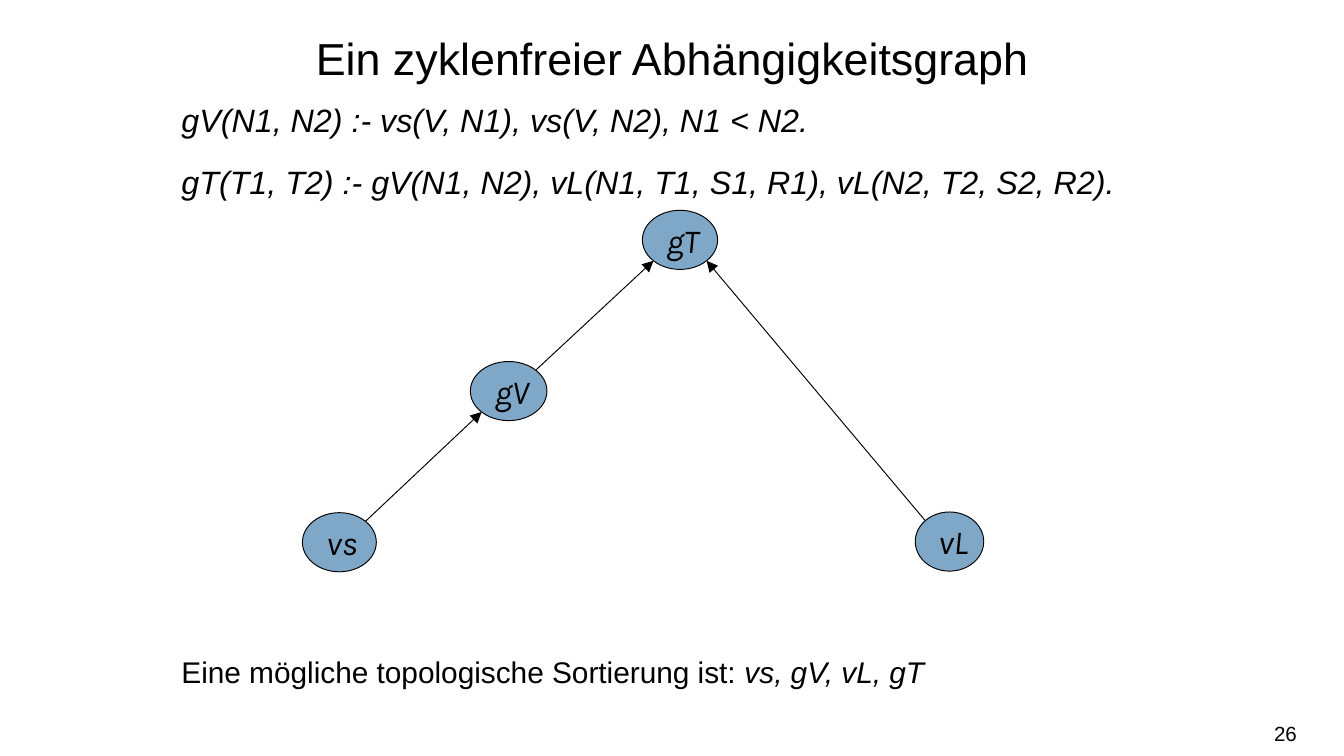
import math

import lxml.etree
import pptx
import pptx.dml.color
import pptx.enum.shapes
import pptx.enum.text
import pptx.oxml.ns
import pptx.util

PX = 4572  # 200 px to the inch
COLORS = {"ink": "000000", "node": "005293"}
ALIGN = pptx.enum.text.PP_ALIGN
MIDDLE = pptx.enum.text.MSO_ANCHOR.MIDDLE
qn = pptx.oxml.ns.qn

# name: left, top, width inside the graph box
NODES = {
    "gT": (506, 0, 112),
    "gV": (250, 225, 114),
    "vs": (0, 450, 110),
    "vL": (912, 449, 102),
}
NODE_H = 88
EDGES = [("vL", "gT"), ("vs", "gV"), ("gV", "gT")]
RULES = [
    "gV(N1, N2) :- vs(V, N1), vs(V, N2), N1 < N2.",
    "gT(T1, T2) :- gV(N1, N2), vL(N1, T1, S1, R1), vL(N2, T2, S2, R2).",
]


def emu(*vals):
    return [round(v * PX) for v in vals]


def rgb(name):
    return pptx.dml.color.RGBColor.from_string(COLORS[name])


def apply(obj, **vals):
    for key, val in vals.items():
        setattr(obj, key, val)


def place(shape, box):
    apply(shape, **dict(zip(("left", "top", "width", "height"), emu(*box))))


def write(para, text, size, italic=False, font="Arial"):
    run = para.add_run()
    run.text = text
    apply(run.font, name=font, size=pptx.util.Pt(size), italic=italic)
    run.font.color.rgb = rgb("ink")


def add_title(slide, box):
    title = slide.shapes.title
    place(title, box)
    frame = title.text_frame
    apply(frame, auto_size=pptx.enum.text.MSO_AUTO_SIZE.NONE,
          vertical_anchor=MIDDLE)
    para = frame.paragraphs[0]
    apply(para, alignment=ALIGN.CENTER, line_spacing=1.25)
    write(para, "Ein zyklenfreier Abhängigkeitsgraph", 24)


def add_body(slide, box):
    """Write the rules above the graph and the sorting below it."""
    body = slide.placeholders[1]
    place(body, box)
    frame = body.text_frame
    frame.auto_size = pptx.enum.text.MSO_AUTO_SIZE.NONE
    paras = [frame.paragraphs[0], frame.add_paragraph(), frame.add_paragraph()]
    for para, gap in zip(paras, (0, 16.9, 246.5)):
        props = para._p.get_or_add_pPr()
        props.set("marL", "0")
        props.set("indent", "0")
        lxml.etree.SubElement(props, qn("a:buNone"))
        apply(para, alignment=ALIGN.LEFT, line_spacing=0.8,
              space_before=pptx.util.Pt(gap))
    for para, rule in zip(paras, RULES):
        write(para, rule, 17.25, italic=True)
    write(paras[-1], "Eine mögliche topologische Sortierung ist: ", 16)
    write(paras[-1], "vs, gV, vL, gT", 16, italic=True)


def add_node(slide, name, box):
    node = slide.shapes.add_shape(
        pptx.enum.shapes.MSO_SHAPE.OVAL, *emu(*box))
    node.shadow.inherit = False
    node.fill.solid()
    node.fill.fore_color.rgb = rgb("node")
    color = node._element.spPr.find(".//" + qn("a:srgbClr"))
    lxml.etree.SubElement(color, qn("a:alpha"), val="50000")
    node.line.color.rgb = rgb("ink")
    node.line.width = pptx.util.Pt(0.5)
    frame = node.text_frame
    apply(frame, word_wrap=False, vertical_anchor=MIDDLE)
    frame.paragraphs[0].alignment = ALIGN.LEFT
    write(frame.paragraphs[0], name, 18, italic=True, font="Karla")


def rim(box, side, down):
    """Give the diagonal point on the rim of an ellipse."""
    x, y, w, h = box
    part = math.sqrt(0.5) / 2
    return x + w * (0.5 + side * part), y + h * (0.5 + down * part)


def add_edge(slide, start, end):
    side = 1 if end[0] > start[0] else -1
    line = slide.shapes.add_connector(
        pptx.enum.shapes.MSO_CONNECTOR.STRAIGHT,
        *emu(*rim(start, side, -1), *rim(end, -side, 1)))
    line.line.color.rgb = rgb("ink")
    line.line.width = pptx.util.Pt(0.5)
    lxml.etree.SubElement(
        line.line._get_or_add_ln(), qn("a:tailEnd"), type="triangle")
    lxml.etree.SubElement(line._element.spPr, qn("a:effectLst"))


def add_graph(slide, left, top):
    boxes = {name: (left + x, top + y, w, NODE_H)
             for name, (x, y, w) in NODES.items()}
    for name, box in boxes.items():
        add_node(slide, name, box)
    for start, end in EDGES:
        add_edge(slide, boxes[start], boxes[end])


def add_number(slide, box):
    frame = slide.shapes.add_textbox(*emu(*box)).text_frame
    apply(frame, word_wrap=True, margin_left=0, margin_right=0,
          vertical_anchor=MIDDLE)
    frame.paragraphs[0].alignment = ALIGN.RIGHT
    write(frame.paragraphs[0], "26", 11)


def main():
    deck = pptx.Presentation()
    deck.slide_width, deck.slide_height = emu(2000, 1125)
    slide = deck.slides.add_slide(deck.slide_layouts[1])
    add_title(slide, (250, 0, 1500, 151))
    add_body(slide, (250, 150, 1530, 900))
    add_graph(slide, 450, 313)
    add_number(slide, (1482, 1062, 448, 60))
    deck.save("out.pptx")


if __name__ == "__main__":
    main()
